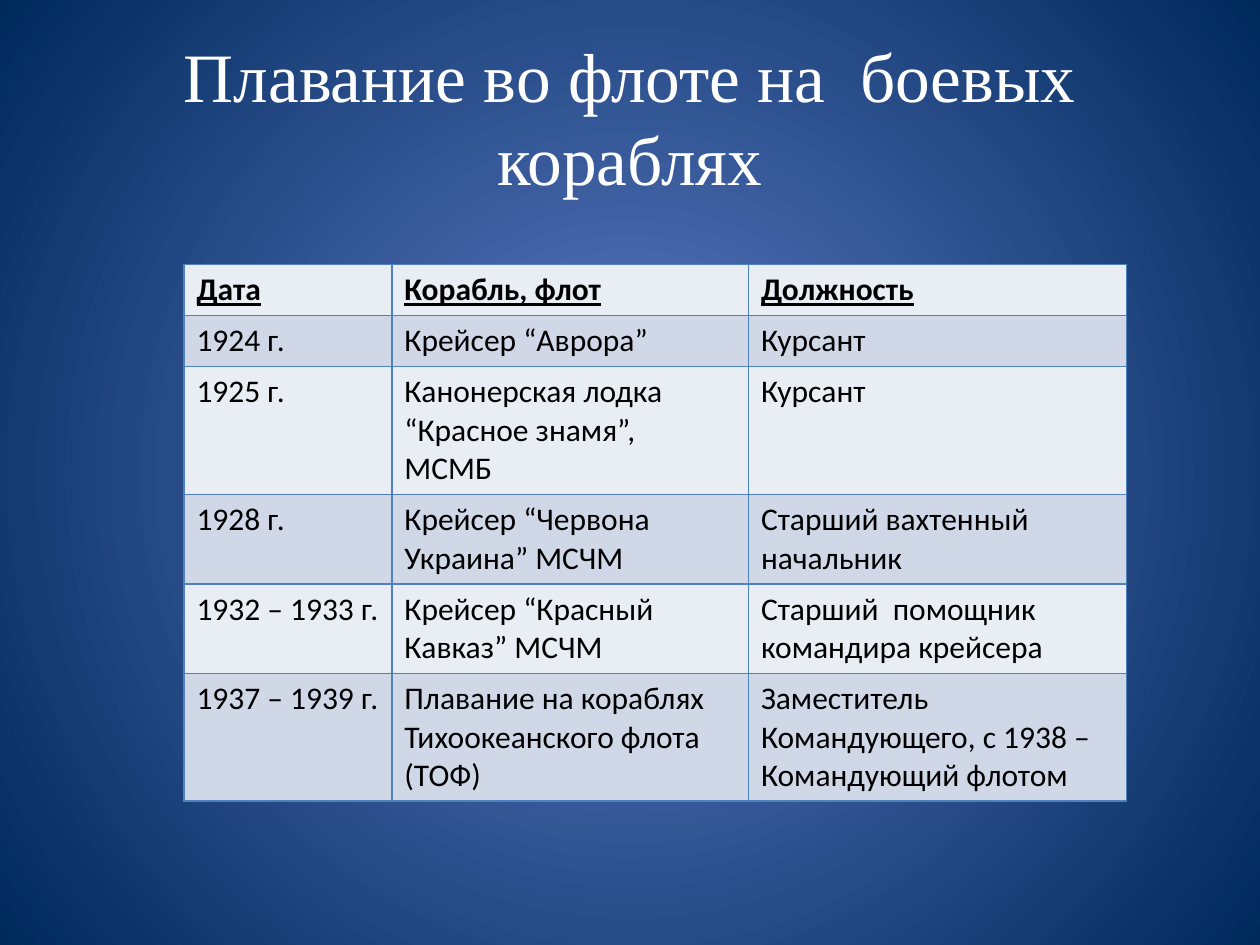
from dataclasses import dataclass

from lxml.etree import SubElement
from pptx import Presentation
from pptx.dml.color import RGBColor
from pptx.enum.text import MSO_ANCHOR as Anchor, PP_ALIGN as Align
from pptx.oxml import parse_xml
from pptx.oxml.ns import nsdecls, qn
from pptx.util import Inches, Pt

COLORS = {
    "center": "5E7CC5",
    "edge": "00295C",
    "title": "FFFFFF",
    "text": "000000",
    "border": "4F81BD",
    "light": "E9EDF4",
    "dark": "D0D8E8",
}
SLIDE_W, SLIDE_H = Inches(10), Inches(7.5)
COLUMN_SHARES = (0.165, 0.283, 0.3)
LINE_H, CELL_PADDING = 0.305, 0.1


@dataclass(frozen=True)
class Service:
    """One table row; lines is the height of its tallest cell."""
    date: str
    ship: str
    post: str
    lines: int = 1


SERVICES = (
    Service("Дата", "Корабль, флот", "Должность"),
    Service("1924 г.", "Крейсер “Аврора”", "Курсант"),
    Service("1925 г.", "Канонерская лодка\n“Красное знамя”,  МСМБ", "Курсант", 3),
    Service("1928 г.", "Крейсер “Червона Украина” МСЧМ",
            "Старший вахтенный начальник", 2),
    Service("1932 – 1933 г.", "Крейсер “Красный Кавказ” МСЧМ",
            "Старший  помощник командира крейсера", 2),
    Service("1937 – 1939 г.",
            "Плавание на кораблях\nТихоокеанского флота\n(ТОФ)",
            "Заместитель Командующего, с 1938 – Командующий флотом", 3),
)


def rgb(name: str) -> RGBColor:
    return RGBColor.from_string(COLORS[name])


def set_radial_background(slide) -> None:
    slide.background.fill.solid()
    properties = slide.element.cSld.find(qn("p:bg")).find(qn("p:bgPr"))
    properties.replace(properties[0], parse_xml(
        f'<a:gradFill {nsdecls("a")} rotWithShape="1"><a:gsLst>'
        f'<a:gs pos="0"><a:srgbClr val="{COLORS["center"]}"/></a:gs>'
        f'<a:gs pos="100000"><a:srgbClr val="{COLORS["edge"]}"/></a:gs>'
        '</a:gsLst><a:path path="circle">'
        '<a:fillToRect l="50000" t="50000" r="50000" b="50000"/>'
        '</a:path></a:gradFill>'))


def add_title(slide, text: str) -> None:
    title = slide.shapes.add_textbox(
        int(SLIDE_W * 0.05), int(SLIDE_H * 0.04),
        int(SLIDE_W * 0.9), Inches(1.25))
    frame = title.text_frame
    frame.word_wrap = True
    frame.vertical_anchor = Anchor.MIDDLE
    frame.text = text
    heading = frame.paragraphs[0]
    heading.alignment = Align.CENTER
    heading.font.name = "Times New Roman"
    heading.font.size = Pt(39.6)
    heading.font.color.rgb = rgb("title")


def add_borders(cell) -> None:
    properties = cell._tc.get_or_add_tcPr()
    for index, side in enumerate(("lnL", "lnR", "lnT", "lnB")):
        line = properties.makeelement(qn(f"a:{side}"), {"w": str(Pt(1))})
        properties.insert(index, line)
        fill = SubElement(line, qn("a:solidFill"))
        SubElement(fill, qn("a:srgbClr"), val=COLORS["border"])


def fill_cell(cell, text: str, fill: str, is_header: bool) -> None:
    cell.fill.solid()
    cell.fill.fore_color.rgb = rgb(fill)
    add_borders(cell)
    cell.text = text
    for paragraph in cell.text_frame.paragraphs:
        font = paragraph.font
        font.name, font.size = "Calibri", Pt(18)
        font.bold = font.underline = is_header
        font.color.rgb = rgb("text")


def add_service_table(slide, services: tuple[Service, ...]) -> None:
    widths = [int(SLIDE_W * share) for share in COLUMN_SHARES]
    heights = [Inches(CELL_PADDING + LINE_H * row.lines) for row in services]
    table = slide.shapes.add_table(
        len(services), len(widths), Inches(1.46), int(SLIDE_H * 0.28),
        sum(widths), sum(heights)).table
    table.first_row = table.horz_banding = False
    for column, width in zip(table.columns, widths):
        column.width = width
    for index, (service, height) in enumerate(zip(services, heights)):
        table.rows[index].height = height
        fill = "dark" if index % 2 else "light"
        texts = (service.date, service.ship, service.post)
        for cell, text in zip(table.rows[index].cells, texts):
            fill_cell(cell, text, fill, is_header=index == 0)


def main() -> None:
    deck = Presentation()
    deck.slide_width, deck.slide_height = SLIDE_W, SLIDE_H
    slide = deck.slides.add_slide(deck.slide_layouts[6])
    set_radial_background(slide)
    add_title(slide, "Плавание во флоте на  боевых кораблях")
    add_service_table(slide, SERVICES)
    deck.save("out.pptx")


if __name__ == "__main__":
    main()
